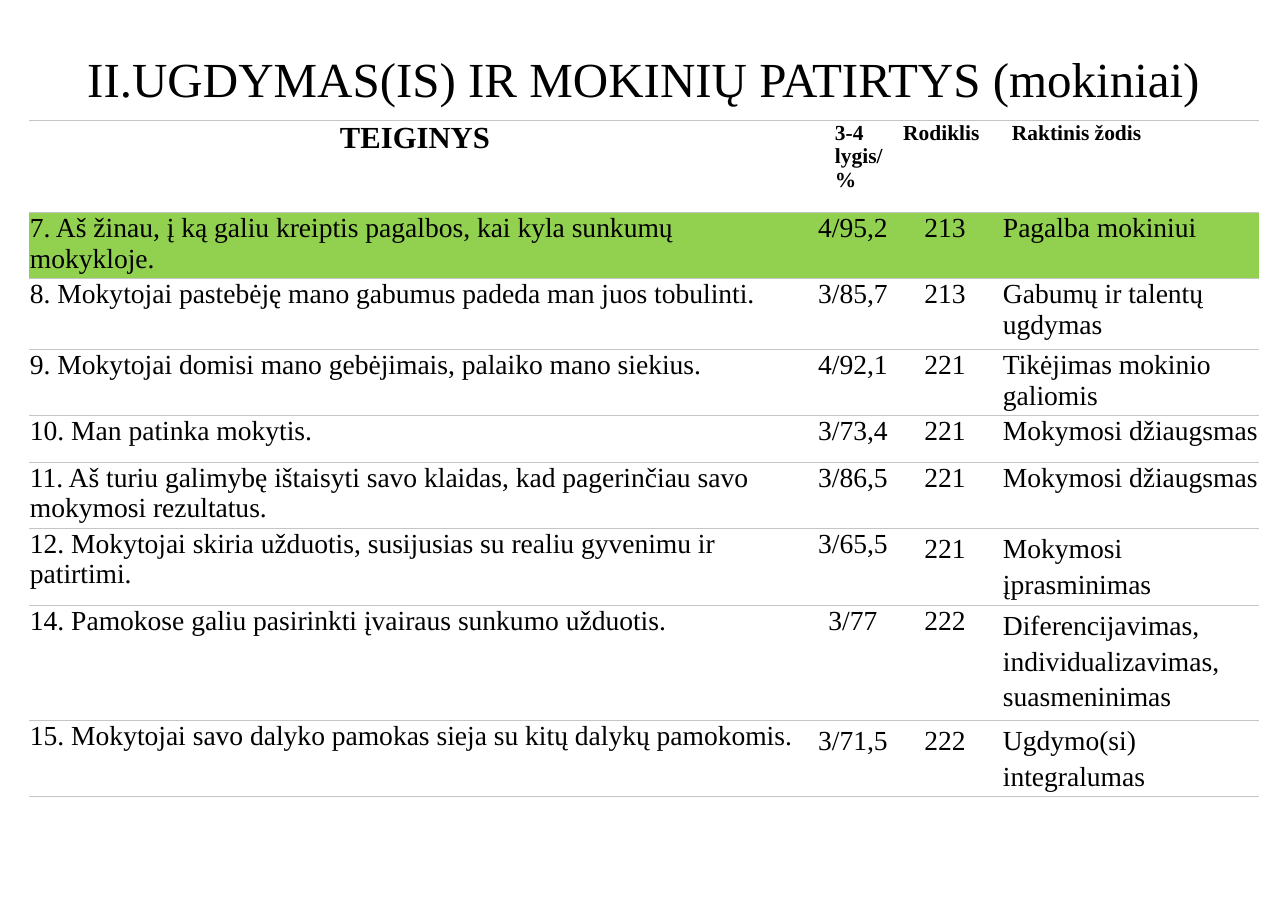
from dataclasses import dataclass

from lxml.etree import SubElement
from pptx import Presentation
from pptx.dml.color import RGBColor
from pptx.enum.text import MSO_ANCHOR, MSO_AUTO_SIZE, PP_ALIGN as Align
from pptx.oxml.ns import qn
from pptx.util import Emu, Pt

EMU_PER_PX = 8298


@dataclass(frozen=True)
class Theme:
    font: str = "Times New Roman"
    ink: str = "000000"
    rule: str = "C6C6C1"
    highlight: str = "92D050"
    title_size: int = 32
    lead_size: int = 20
    head_size: int = 14
    body_size: int = 18
    rule_width: float = 0.75


@dataclass(frozen=True)
class Column:
    heading: str
    width: int
    indent: int
    align: Align
    head_indent: int
    head_align: Align
    head_size: int


@dataclass(frozen=True)
class Statement:
    height: int
    texts: tuple[str, str, str, str]
    highlighted: bool = False
    loose_from: int = 4  # first column set with wider line spacing


THEME = Theme()
TITLE = "II.UGDYMAS(IS) IR MOKINIŲ PATIRTYS (mokiniai)"
HEADING_HEIGHT = 92
LOOSE_SPACING = 1.17

COLUMNS = (
    Column("TEIGINYS", 771, 1, Align.LEFT, 1, Align.CENTER, THEME.lead_size),
    Column("3-4 lygis/\n%", 91, 15, Align.CENTER, 35, Align.LEFT, THEME.head_size),
    Column("Rodiklis", 101, 7, Align.CENTER, 0, Align.CENTER, THEME.head_size),
    Column("Raktinis žodis", 267, 11, Align.LEFT, 20, Align.LEFT, THEME.head_size),
)

STATEMENTS = (
    Statement(66, ("7. Aš žinau, į ką galiu kreiptis pagalbos, kai kyla sunkumų mokykloje.",
                   "4/95,2", "213", "Pagalba mokiniui"), highlighted=True),
    Statement(71, ("8. Mokytojai pastebėję mano gabumus padeda man juos tobulinti.",
                   "3/85,7", "213", "Gabumų ir talentų ugdymas")),
    Statement(66, ("9. Mokytojai domisi mano gebėjimais, palaiko mano siekius.",
                   "4/92,1", "221", "Tikėjimas mokinio galiomis")),
    Statement(47, ("10. Man patinka mokytis.",
                   "3/73,4", "221", "Mokymosi džiaugsmas")),
    Statement(66, ("11. Aš turiu galimybę ištaisyti savo klaidas, kad pagerinčiau savo "
                   "mokymosi rezultatus.",
                   "3/86,5", "221", "Mokymosi džiaugsmas")),
    Statement(77, ("12. Mokytojai skiria užduotis, susijusias su realiu gyvenimu ir patirtimi.",
                   "3/65,5", "221", "Mokymosi įprasminimas"), loose_from=2),
    Statement(115, ("14. Pamokose galiu pasirinkti įvairaus sunkumo užduotis.",
                    "3/77", "222", "Diferencijavimas, individualizavimas, suasmeninimas"),
              loose_from=3),
    Statement(76, ("15. Mokytojai savo dalyko pamokas sieja su kitų dalykų pamokomis.",
                   "3/71,5", "222", "Ugdymo(si) integralumas"), loose_from=1),
)


def px(length: int) -> Emu:
    return Emu(length * EMU_PER_PX)


def write(frame, text: str, *, size: int, align: Align = Align.LEFT, bold: bool = False,
          indent: int = 0, line_spacing: float = 1.0) -> None:
    """Fill a text frame, one paragraph per line of text."""
    frame.word_wrap = True
    frame.text = text
    for paragraph in frame.paragraphs:
        paragraph.alignment = align
        paragraph.line_spacing = line_spacing
        paragraph.space_before = Pt(0)
        properties = paragraph._p.get_or_add_pPr()
        properties.set("marL", str(px(indent)))
        properties.set("indent", "0")
        for run in paragraph.runs:
            run.font.name = THEME.font
            run.font.size = Pt(size)
            run.font.bold = bold
            run.font.color.rgb = RGBColor.from_string(THEME.ink)


def clear_margins(box) -> None:
    box.margin_left = box.margin_right = box.margin_top = box.margin_bottom = 0


def rule_cell(cell) -> None:
    """Draw thin rules above and below a cell and none at its sides."""
    properties = cell._tc.get_or_add_tcPr()
    for side in ("lnL", "lnR", "lnT", "lnB"):
        line = SubElement(properties, qn(f"a:{side}"), w=str(Pt(THEME.rule_width)))
        if side in ("lnL", "lnR"):
            SubElement(line, qn("a:noFill"))
        else:
            fill = SubElement(line, qn("a:solidFill"))
            SubElement(fill, qn("a:srgbClr"), val=THEME.rule)


def style_cell(cell, highlighted: bool) -> None:
    clear_margins(cell)
    cell.vertical_anchor = MSO_ANCHOR.TOP
    rule_cell(cell)
    if highlighted:
        cell.fill.solid()
        cell.fill.fore_color.rgb = RGBColor.from_string(THEME.highlight)
    else:
        cell.fill.background()


def add_title(slide) -> None:
    title = slide.shapes.title
    title.left, title.top, title.width, title.height = px(75), px(43), px(1138), px(83)
    frame = title.text_frame
    clear_margins(frame)
    frame.margin_top = px(6)
    frame.vertical_anchor = MSO_ANCHOR.TOP
    frame.auto_size = MSO_AUTO_SIZE.NONE
    write(frame, TITLE, size=THEME.title_size, align=Align.CENTER)


def add_statements(slide) -> None:
    heights = [HEADING_HEIGHT, *(statement.height for statement in STATEMENTS)]
    width = sum(column.width for column in COLUMNS)
    table = slide.shapes.add_table(len(heights), len(COLUMNS), px(29), px(121),
                                   px(width), px(sum(heights))).table
    table.first_row = table.horz_banding = False
    for row, height in zip(table.rows, heights):
        row.height = px(height)
    for index, column in enumerate(COLUMNS):
        table.columns[index].width = px(column.width)
        heading = table.cell(0, index)
        style_cell(heading, False)
        write(heading.text_frame, column.heading, size=column.head_size, bold=True,
              align=column.head_align, indent=column.head_indent)
        for number, statement in enumerate(STATEMENTS, start=1):
            cell = table.cell(number, index)
            style_cell(cell, statement.highlighted)
            write(cell.text_frame, statement.texts[index], size=THEME.body_size,
                  align=column.align, indent=column.indent,
                  line_spacing=LOOSE_SPACING if index >= statement.loose_from else 1.0)


def main() -> None:
    deck = Presentation()
    deck.slide_width, deck.slide_height = px(1288), px(911)
    slide = deck.slides.add_slide(deck.slide_layouts[5])
    add_title(slide)
    add_statements(slide)
    deck.save("out.pptx")


if __name__ == "__main__":
    main()
